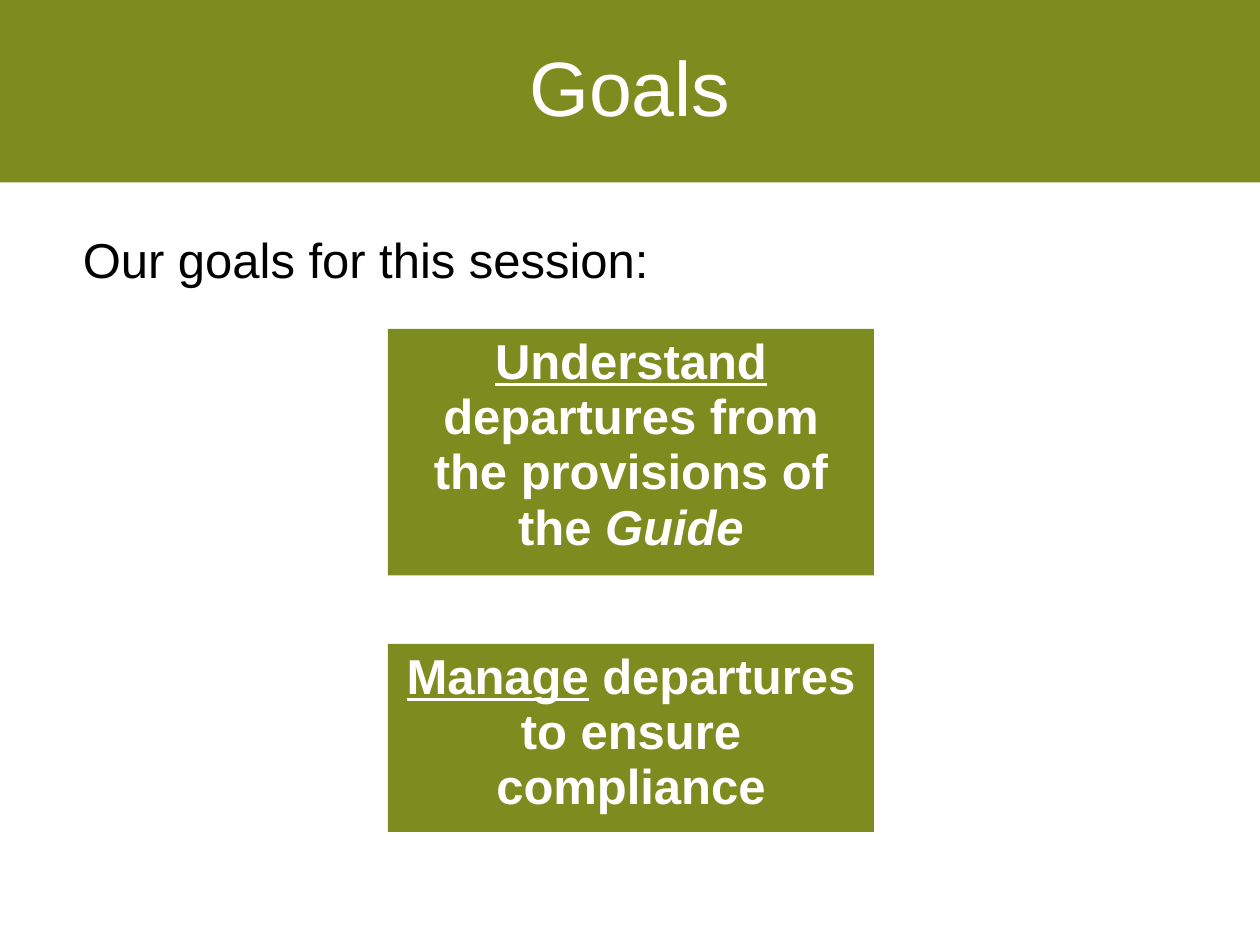
from pptx import Presentation
from pptx.dml.color import RGBColor
from pptx.enum import shapes, text
from pptx.util import Cm, Pt

OLIVE = RGBColor(0x7D, 0x8C, 0x1F)
WHITE = RGBColor(0xFF, 0xFF, 0xFF)
BLACK = RGBColor(0, 0, 0)

TITLE = "Goals"
INTRO = "Our goals for this session:"
# Top and height in cm, then the spans with their emphasis
GOALS = [
    (6.63, 4.97, [("Understand", "underline"),
                  (" departures from the provisions of the", None),
                  (" Guide", "italic")]),
    (12.98, 3.79, [("Manage", "underline"),
                   (" departures to ensure compliance", None)]),
]
GOAL_LEFT, GOAL_WIDTH = 7.82, 9.8

deck = Presentation()
deck.slide_width, deck.slide_height = Cm(25.4), Cm(19.05)
page = deck.slides.add_slide(deck.slide_layouts[6])


def write(box, spans, size, color, anchor, align):
    frame = box.text_frame
    frame.word_wrap = True
    frame.vertical_anchor = anchor
    para = frame.paragraphs[0]
    para.alignment = align
    para.font.name, para.font.size = "Arial", Pt(size)
    para.font.color.rgb = color
    for words, emphasis in spans:
        span = para.add_run()
        span.text = words
        if emphasis:
            setattr(span.font, emphasis, True)
    return para


def add_panel(left, top, width, height):
    panel = page.shapes.add_shape(shapes.MSO_SHAPE.RECTANGLE,
                                  Cm(left), Cm(top), Cm(width), Cm(height))
    panel.shadow.inherit = False
    panel.fill.solid()
    panel.fill.fore_color.rgb = OLIVE
    panel.line.fill.background()
    return panel


banner = add_panel(0, 0, 25.4, 3.68)
heading = write(banner, [(TITLE, None)], 44, WHITE,
                text.MSO_ANCHOR.MIDDLE, text.PP_ALIGN.CENTER)
heading.line_spacing = 0.9

intro = page.shapes.add_textbox(Cm(1.42), Cm(4.14), Cm(14), Cm(1.8))
write(intro, [(INTRO, None)], 28, BLACK,
      text.MSO_ANCHOR.BOTTOM, text.PP_ALIGN.LEFT)

for top, height, spans in GOALS:
    goal = add_panel(GOAL_LEFT, top, GOAL_WIDTH, height)
    para = write(goal, spans, 28, WHITE,
                 text.MSO_ANCHOR.TOP, text.PP_ALIGN.CENTER)
    para.font.bold = True
    para.line_spacing = 0.94

deck.save("out.pptx")
